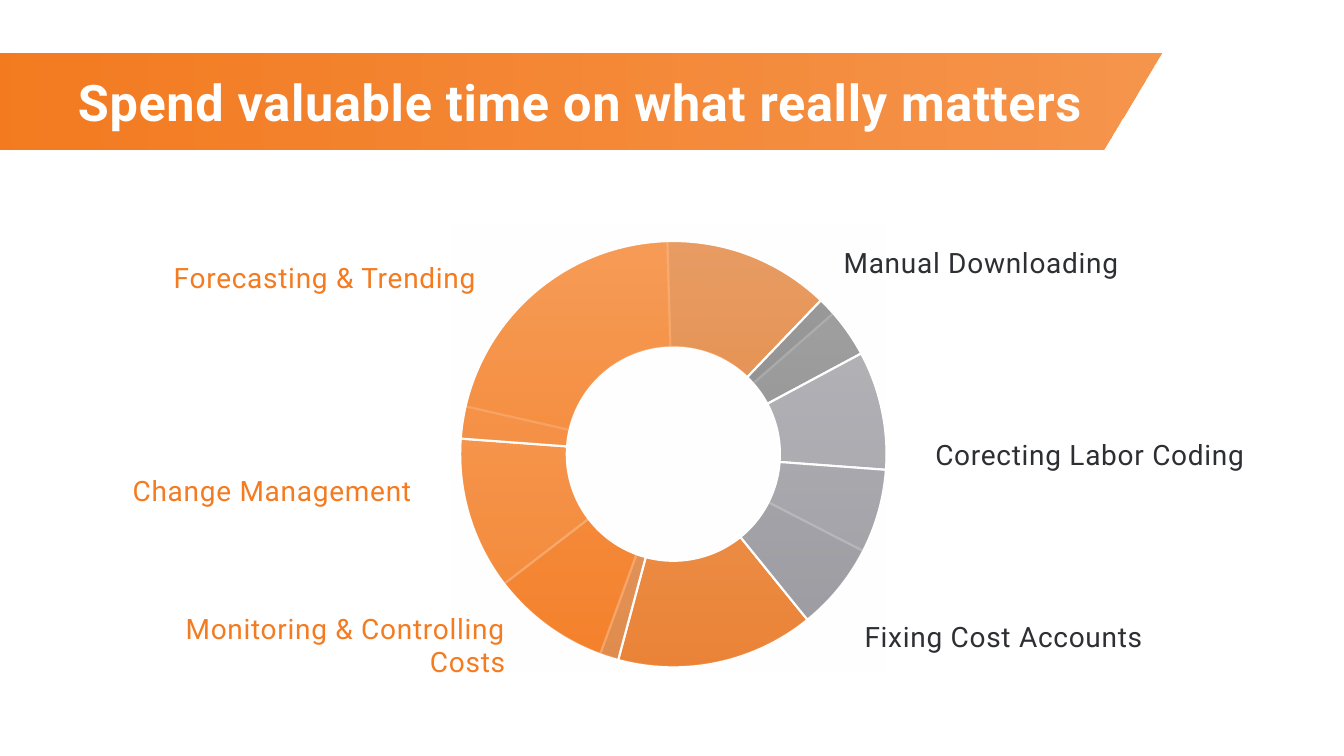
import pptx
import pptx.chart.data
import pptx.dml.color
import pptx.enum.chart
import pptx.enum.shapes
import pptx.enum.text
import pptx.oxml
import pptx.oxml.ns
import pptx.util

Pt = pptx.util.Pt
RGB = pptx.dml.color.RGBColor
qn = pptx.oxml.ns.qn
ALIGN = pptx.enum.text.PP_ALIGN

ORANGE = RGB(0xF4, 0x7B, 0x20)
GRAY = RGB(0x7A, 0x7A, 0x7A)
STEEL = RGB(0x91, 0x91, 0x98)
DARK = RGB(0x2E, 0x2F, 0x33)
WHITE = RGB(0xFF, 0xFF, 0xFF)


def fade(color, share):
    """Give an a:srgbClr element an opacity in percent."""
    alpha = color.makeelement(qn("a:alpha"), {"val": str(share * 1000)})
    color.append(alpha)


def write(shape, text, align, look):
    """Fill a shape with one middle-anchored, lightly spaced line of text."""
    frame = shape.text_frame
    frame.word_wrap = True
    frame.auto_size = pptx.enum.text.MSO_AUTO_SIZE.NONE
    frame.vertical_anchor = pptx.enum.text.MSO_ANCHOR.MIDDLE
    para = frame.paragraphs[0]
    para.alignment = align
    run = para.add_run()
    run.text = text
    run.font.color.rgb = look["color"]
    for name in ("name", "size", "bold"):
        setattr(run.font, name, look[name])
    for props in shape.element.iter(qn("a:rPr")):
        props.set("spc", "50")


deck = pptx.Presentation()
deck.slide_width, deck.slide_height = Pt(960), Pt(540)
slide = deck.slides.add_slide(deck.slide_layouts[5])
shapes = slide.shapes

# Two see-through rings, one over the other
SLICES = [(ORANGE, 85), (ORANGE, 70), (ORANGE, 80),
          (GRAY, 75), (STEEL, 60), (STEEL, 70)]
RINGS = [
    (160.5, 200, (9, 14, 21, 14, 19, 23)),
    (161, 141, (15, 22, 36, 5, 9, 13)),
]
LAYOUT = {"layoutTarget": "inner", "xMode": "edge", "yMode": "edge",
          "x": 0.14, "y": 0.03, "w": 0.72, "h": 0.94}

for top, start, values in RINGS:
    data = pptx.chart.data.CategoryChartData()
    data.categories = ["1", "2", "3", "4", "5", "6"]
    data.add_series("Series 1", values)
    chart = shapes.add_chart(pptx.enum.chart.XL_CHART_TYPE.DOUGHNUT,
                             Pt(269.5), Pt(top), Pt(423), Pt(327), data).chart
    chart.has_title = chart.has_legend = False
    chart.font.name, chart.font.size = "Open Sans", Pt(10)
    chart.font.color.rgb = DARK
    plot = chart.plots[0]
    plot.vary_by_categories = True
    for spot, (color, share) in enumerate(SLICES):
        form = plot.series[0].points[spot].format
        form.fill.solid()
        form.fill.fore_color.rgb = color
        form.line.color.rgb = WHITE
        form.line.width = Pt(1.5)
    for slot, (color, share) in zip(chart.element.iter(qn("c:dPt")), SLICES):
        fade(next(slot.iter(qn("a:srgbClr"))), share)
    for tag, val in (("c:firstSliceAng", start), ("c:holeSize", 60)):
        next(chart.element.iter(qn(tag))).set("val", str(val))
    area = next(chart.element.iter(qn("c:plotArea")))
    for old in area.findall(qn("c:layout")):
        area.remove(old)
    layout = area.makeelement(qn("c:layout"), {})
    area.insert(0, layout)
    manual = layout.makeelement(qn("c:manualLayout"), {})
    layout.append(manual)
    for tag, val in LAYOUT.items():
        manual.append(manual.makeelement(qn("c:" + tag), {"val": str(val)}))

# White sheen over the rings and the orange banner
sheen = shapes.add_shape(pptx.enum.shapes.MSO_SHAPE.RECTANGLE,
                         Pt(322.5), Pt(161), Pt(310), Pt(327))
pen = shapes.build_freeform(0, Pt(38.5))
pen.add_line_segments([(Pt(829.5), Pt(38.5)), (Pt(788), Pt(107)),
                       (0, Pt(107))], close=True)
banner = pen.convert_to_shape()

for shape, color, angle, shares in ((sheen, WHITE, 90, (0, 23)),
                                    (banner, ORANGE, 0, (100, 80))):
    shape.shadow.inherit = False
    shape.line.fill.background()
    shape.fill.gradient()
    shape.fill.gradient_angle = angle
    for stop in shape.fill.gradient_stops:
        stop.color.rgb = color
    for tint, share in zip(shape.element.iter(qn("a:srgbClr")), shares):
        fade(tint, share)

title = shapes.title
title.left, title.top, title.width, title.height = (
    0, Pt(38.5), Pt(829.5), Pt(68.5))
title.element.addprevious(banner.element)
write(title, "Spend valuable time on what really matters", ALIGN.CENTER,
      {"name": "Roboto", "size": Pt(36), "bold": True, "color": WHITE})

# Labels: left ones orange, right ones dark
LABELS = [
    ("Forecasting & Trending", 48, 171, ALIGN.RIGHT, ORANGE),
    ("Change Management", 2, 323.5, ALIGN.RIGHT, ORANGE),
    ("Monitoring & Controlling Costs", 69, 433.5, ALIGN.RIGHT, ORANGE),
    ("Manual Downloading", 595.5, 160.5, ALIGN.LEFT, DARK),
    ("Corecting Labor Coding", 661, 297.5, ALIGN.LEFT, DARK),
    ("Fixing Cost Accounts", 610.5, 427.5, ALIGN.LEFT, DARK),
]
for text, left, top, align, color in LABELS:
    box = shapes.add_textbox(Pt(left), Pt(top), Pt(299), Pt(54))
    write(box, text, align,
          {"name": "Roboto", "size": Pt(20), "bold": False, "color": color})

deck.save("out.pptx")
